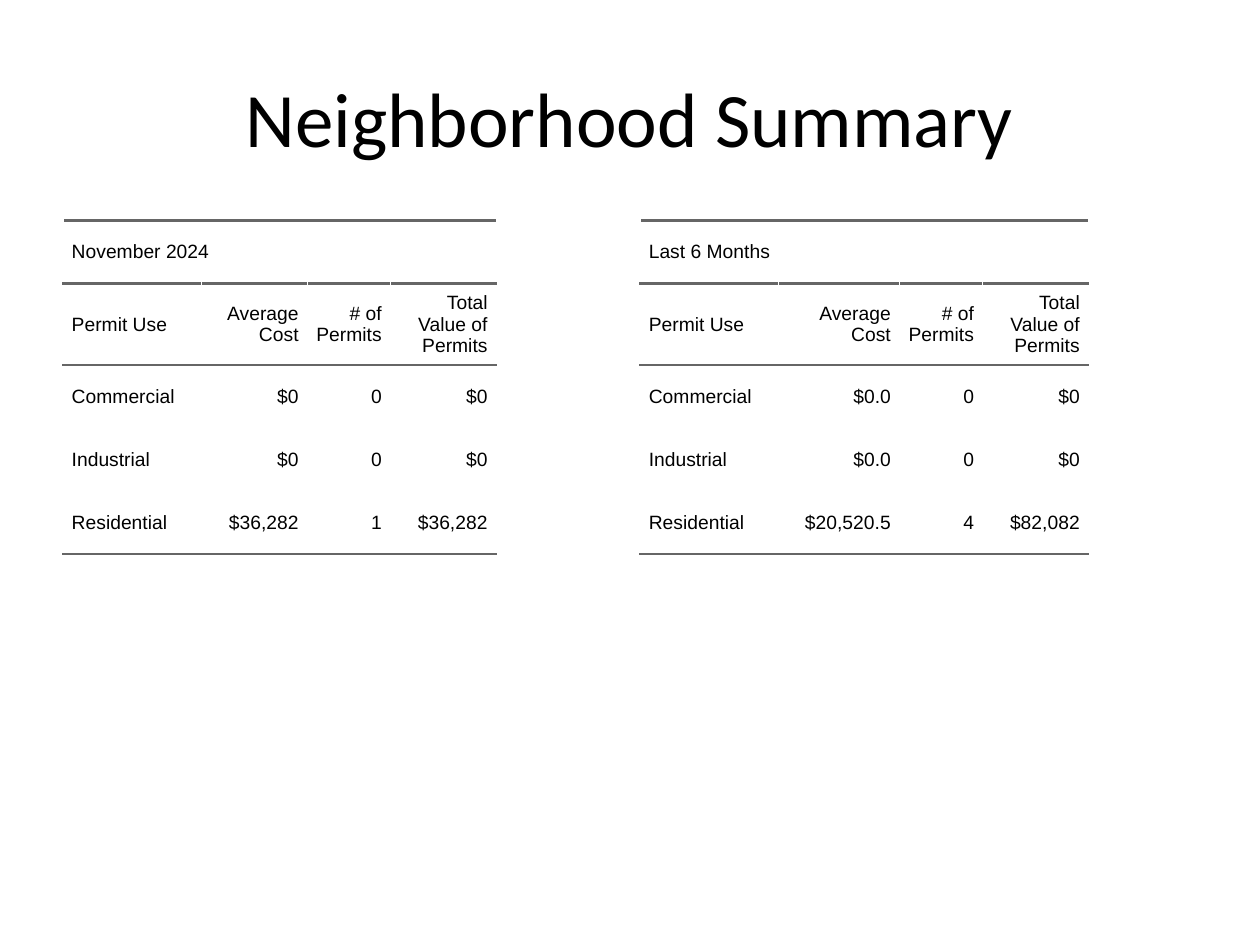
import pptx
import pptx.dml.color
import pptx.enum.text
import pptx.oxml
import pptx.oxml.ns
import pptx.util
from pptx.util import Inches, Pt

BLACK = pptx.dml.color.RGBColor(0x00, 0x00, 0x00)
RULE_GREY = pptx.dml.color.RGBColor(0x66, 0x66, 0x66)
ALIGN = pptx.enum.text.PP_ALIGN
MIDDLE = pptx.enum.text.MSO_ANCHOR.MIDDLE

SLIDE_W, SLIDE_H = Inches(10), Inches(7.5)
MARGIN = Inches(0.5)
CONTENT_W, CONTENT_H = Inches(4.42), Inches(4.95)
ROW_H = Inches(0.5)
PADDING = Pt(5)

TITLE_FONT = {"name": "Calibri", "size": Pt(44)}
TABLE_FONT = {"name": "Arial", "size": Pt(11)}
CELL_FORMAT = {"margin_left": 0, "margin_right": 0, "margin_top": PADDING,
               "margin_bottom": PADDING, "vertical_anchor": MIDDLE}
CELL_SPACING = {"space_before": PADDING, "space_after": PADDING}

HEADINGS = ("Permit Use", "Average Cost", "# of Permits", "Total Value of Permits")
NOVEMBER = (
    ("Commercial", "$0", "0", "$0"),
    ("Industrial", "$0", "0", "$0"),
    ("Residential", "$36,282", "1", "$36,282"),
)
SIX_MONTHS = (
    ("Commercial", "$0.0", "0", "$0"),
    ("Industrial", "$0.0", "0", "$0"),
    ("Residential", "$20,520.5", "4", "$82,082"),
)


def apply(target, values):
    for key, value in values.items():
        setattr(target, key, value)


def write(paragraph, text, font, align):
    run = paragraph.add_run()
    run.text = text
    apply(run.font, font)
    run.font.color.rgb = BLACK
    paragraph.alignment = align


def add_title(slide, text):
    title = slide.shapes.add_textbox(
        MARGIN, int(SLIDE_H * 0.04), SLIDE_W - 2 * MARGIN, Inches(1.25))
    apply(title.text_frame, {"word_wrap": True, "vertical_anchor": MIDDLE})
    write(title.text_frame.paragraphs[0], text, TITLE_FONT, ALIGN.CENTER)


def rule_cell(cell, sides):
    """Draw grey rules on the given sides of a cell: "T" top, "B" bottom."""
    properties = cell._tc.get_or_add_tcPr()
    for side in sides:
        properties.append(pptx.oxml.parse_xml(
            f'<a:ln{side} {pptx.oxml.ns.nsdecls("a")} w="{Pt(1.5)}">'
            f'<a:solidFill><a:srgbClr val="{RULE_GREY}"/></a:solidFill></a:ln{side}>'))


def fill_cell(cell, text, align):
    apply(cell, CELL_FORMAT)
    paragraph = cell.text_frame.paragraphs[0]
    write(paragraph, text, TABLE_FONT, align)
    apply(paragraph, CELL_SPACING)
    indents = paragraph._p.get_or_add_pPr()
    for side in ("marL", "marR"):
        indents.set(side, str(PADDING))


def add_permit_table(slide, left, period, permits, column_widths):
    rows = ((period,), HEADINGS, *permits)
    frame = slide.shapes.add_table(
        len(rows), len(HEADINGS), left, Inches(1.75), CONTENT_W, CONTENT_H)
    table = frame.table
    apply(table, {"first_row": False, "horz_banding": False})
    for column, width in zip(table.columns, column_widths):
        column.width = Inches(width)
    for row in table.rows:
        row.height = ROW_H
    apply(frame, {"width": CONTENT_W, "height": CONTENT_H})

    rules = {0: "TB", 1: "TB", len(rows) - 1: "B"}
    for r, texts in enumerate(rows):
        for c in range(len(HEADINGS)):
            cell = table.cell(r, c)
            rule_cell(cell, rules.get(r, ""))
            cell.fill.background()
            if c < len(texts):
                fill_cell(cell, texts[c], ALIGN.RIGHT if c else ALIGN.LEFT)
    table.cell(0, 0).merge(table.cell(0, len(HEADINGS) - 1))


def main():
    deck = pptx.Presentation()
    apply(deck, {"slide_width": SLIDE_W, "slide_height": SLIDE_H})
    slide = deck.slides.add_slide(deck.slide_layouts[6])
    add_permit_table(slide, MARGIN, "November 2024", NOVEMBER,
                     (1.1, 0.84, 0.66, 0.84))
    add_permit_table(slide, SLIDE_W - MARGIN - CONTENT_W, "Last 6 Months", SIX_MONTHS,
                     (1.1, 0.96, 0.66, 0.84))
    add_title(slide, "Neighborhood Summary")
    deck.save("out.pptx")


if __name__ == "__main__":
    main()
